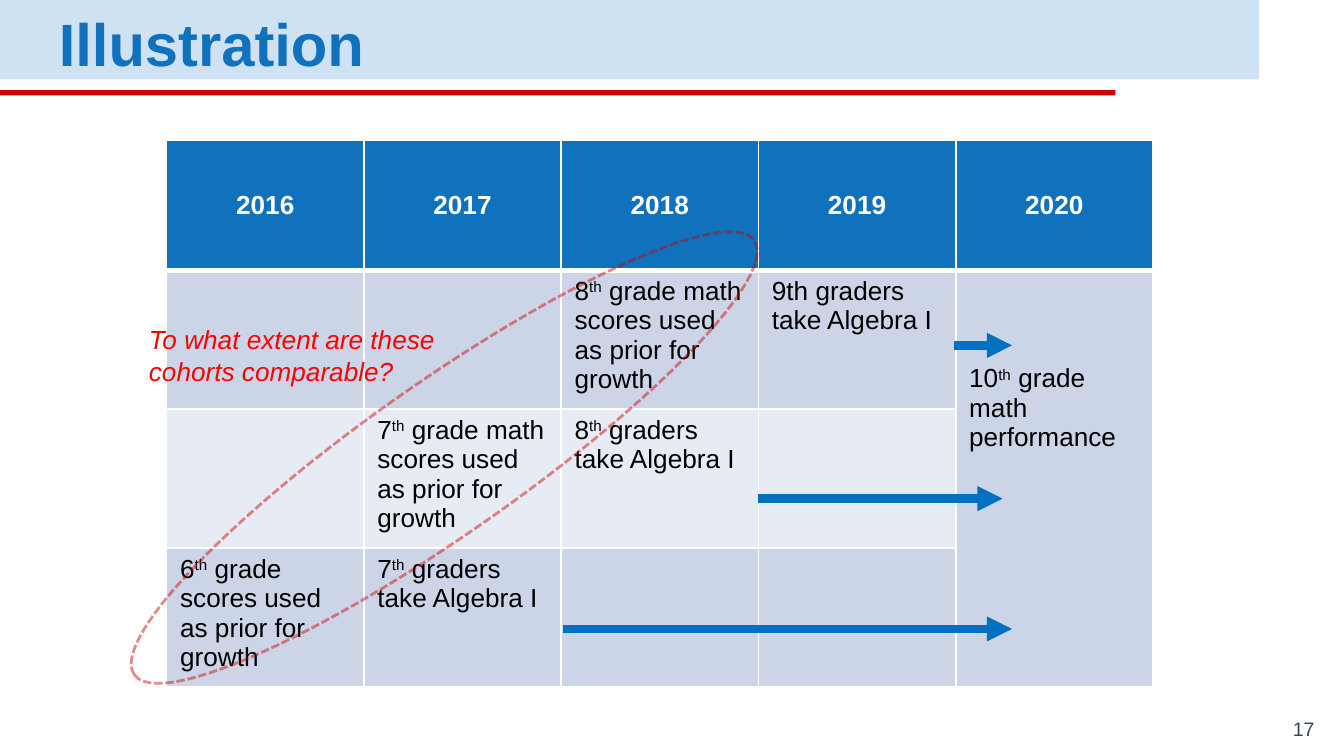
from dataclasses import dataclass

import pptx
import pptx.dml.color
import pptx.enum.dml
import pptx.enum.shapes
import pptx.enum.text
import pptx.oxml
import pptx.oxml.ns
import pptx.util

Inches = pptx.util.Inches
Pt = pptx.util.Pt
Shape = pptx.enum.shapes.MSO_SHAPE
Align = pptx.enum.text.PP_ALIGN
Anchor = pptx.enum.text.MSO_ANCHOR
qn = pptx.oxml.ns.qn
A_NS = pptx.oxml.ns.nsdecls("a")


@dataclass(frozen=True)
class Theme:
    font: str = "Arial"
    blue: str = "1071BD"
    band: str = "CFE2F3"
    red: str = "CC0000"
    note: str = "FF0000"
    arrow: str = "0070C0"
    gray: str = "3A4950"
    black: str = "000000"
    white: str = "FFFFFF"
    rows: tuple = ("CCD5E8", "E7EBF4")
    title_size: float = 32
    body_size: float = 14
    number_size: float = 10.5


THEME = Theme()
YEARS = ["2016", "2017", "2018", "2019", "2020"]
COHORTS = [
    ["", "", "8^th^ grade math scores used as prior for growth",
     "9th graders take Algebra I", "10^th^ grade math performance"],
    ["", "7^th^ grade math scores used as prior for growth",
     "8^th^ graders take Algebra I", "", ""],
    ["6^th^ grade scores used as prior for growth",
     "7^th^ graders take Algebra I", "", "", ""],
]
ARROWS = [(5.86, 1.53, 0.43), (4.4, 2.67, 1.82), (2.95, 3.64, 3.34)]


def rgb(color):
    return pptx.dml.color.RGBColor.from_string(color)


def write(tf, text, size=THEME.body_size, color=THEME.black, bold=False,
          italic=False, align=Align.LEFT, line_spacing=None, after=None):
    p = tf.paragraphs[0]
    p.alignment = align
    p.line_spacing = line_spacing
    if after is not None:
        p.space_after = Pt(after)
    if not text:
        p._p.append(pptx.oxml.parse_xml(
            f'<a:endParaRPr {A_NS} sz="{int(size * 100)}"/>'))
        return
    for i, part in enumerate(text.split("^")):
        r = p.add_run()
        r.text = part
        r.font.name = THEME.font
        r.font.size = Pt(size)
        r.font.bold = bold
        r.font.italic = italic
        r.font.color.rgb = rgb(color)
        if i % 2:
            r.font._element.set("baseline", "30000")


def add_text(s, box, text, anchor=Anchor.TOP, inset=None, **style):
    tf = s.shapes.add_textbox(*map(Inches, box)).text_frame
    tf.word_wrap = True
    tf.vertical_anchor = anchor
    if inset is not None:
        tf.margin_left = tf.margin_right = Inches(inset)
        tf.margin_top = tf.margin_bottom = Inches(inset)
    write(tf, text, **style)


def add_bar(s, box, color):
    sp = s.shapes.add_shape(Shape.RECTANGLE, *map(Inches, box))
    sp.shadow.inherit = False
    sp.fill.solid()
    sp.fill.fore_color.rgb = rgb(color)
    sp.line.fill.background()


def add_header(s, box, title):
    x, y, w, h = box
    add_bar(s, (x, y, w, 0.59), THEME.band)
    add_bar(s, (x, y + 0.67, 8.3, 0.04), THEME.red)
    add_text(s, (x + 0.34, y + 0.03, w - 0.34, 0.49), title, Anchor.MIDDLE, 0.1,
             size=THEME.title_size, color=THEME.blue, bold=True,
             line_spacing=1.15, after=16)


def style_cell(cell, fill, bottom=1):
    tcPr = cell._tc.get_or_add_tcPr()
    for side, width in (("L", 1), ("R", 1), ("T", 1), ("B", bottom)):
        tcPr.append(pptx.oxml.parse_xml(
            f'<a:ln{side} {A_NS} w="{Pt(width)}"><a:solidFill>'
            f'<a:srgbClr val="{THEME.white}"/></a:solidFill></a:ln{side}>'))
    cell.fill.solid()
    cell.fill.fore_color.rgb = rgb(fill)


def add_cohort_table(s, box):
    x, y, w, h = box
    n_rows, n_cols = len(COHORTS) + 1, len(YEARS)
    table = s.shapes.add_table(n_rows, n_cols, *map(Inches, box)).table
    table.first_row = table.horz_banding = False
    for col in table.columns:
        col.width = Inches(w / n_cols)
    for row in table.rows:
        row.height = Inches(h / n_rows)
    outcome = table.cell(1, n_cols - 1)
    outcome.merge(table.cell(n_rows - 1, n_cols - 1))
    for j, year in enumerate(YEARS):
        cell = table.cell(0, j)
        style_cell(cell, THEME.blue, bottom=3)
        cell.vertical_anchor = Anchor.MIDDLE
        write(cell.text_frame, year, color=THEME.white, bold=True, align=Align.CENTER)
    for i, texts in enumerate(COHORTS):
        for j, text in enumerate(texts):
            cell = table.cell(i + 1, j)
            style_cell(cell, THEME.rows[i % 2])
            write(cell.text_frame, text)
    outcome.margin_top = Inches(0.7)


def add_arrow(s, x, y, length):
    c = s.shapes.add_connector(pptx.enum.shapes.MSO_CONNECTOR.STRAIGHT,
                               Inches(x), Inches(y), Inches(x + length), Inches(y))
    c.line.color.rgb = rgb(THEME.arrow)
    c.line.width = Pt(4.5)
    c.line._get_or_add_ln().append(
        pptx.oxml.parse_xml(f'<a:tailEnd {A_NS} type="triangle"/>'))
    c._element.spPr.append(pptx.oxml.parse_xml(f"<a:effectLst {A_NS}/>"))


def add_cohort_ring(s, box):
    sp = s.shapes.add_shape(Shape.OVAL, *map(Inches, box))
    sp.shadow.inherit = False
    sp.rotation = 325
    sp.fill.background()
    sp.line.color.rgb = rgb(THEME.red)
    sp.line.width = Pt(1.5)
    sp.line.dash_style = pptx.enum.dml.MSO_LINE.SQUARE_DOT
    color = sp.line._get_or_add_ln().find(".//" + qn("a:srgbClr"))
    color.append(pptx.oxml.parse_xml(f'<a:alpha {A_NS} val="45000"/>'))


def add_cohort_diagram(s, box):
    x, y, w, h = box
    add_cohort_table(s, box)
    for dx, dy, length in ARROWS:
        add_arrow(s, x + dx, y + dy, length)
    add_cohort_ring(s, (x - 0.75, y + 1.8, 5.63, 1.13))
    add_text(s, (x - 0.23, y + 1.32, 2.34, 0.57),
             "To what extent are these cohorts comparable?",
             color=THEME.note, italic=True)


def main():
    prs = pptx.Presentation()
    prs.slide_width = Inches(10)
    prs.slide_height = prs.slide_width * 9 // 16
    s = prs.slides.add_slide(prs.slide_layouts[6])
    add_header(s, (0, 0, 9.37, 0.71), "Illustration")
    add_text(s, (9.28, 5.34, 0.6, 0.26), "17", Anchor.BOTTOM, 0.1,
             size=THEME.number_size, color=THEME.gray, align=Align.RIGHT)
    add_cohort_diagram(s, (1.24, 1.04, 7.34, 3.88))
    prs.save("out.pptx")


if __name__ == "__main__":
    main()
